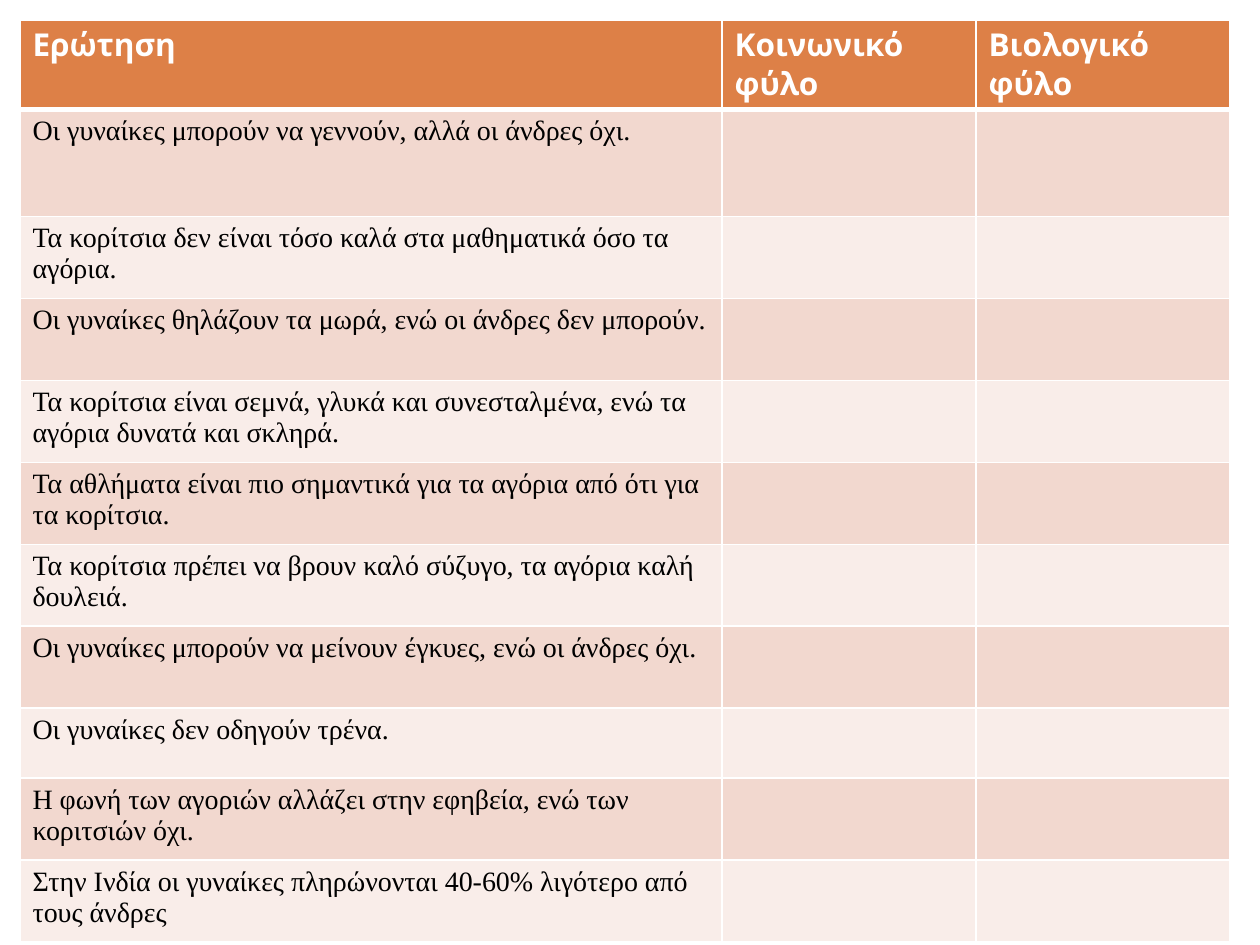
import dataclasses

import pptx
import pptx.dml.color
import pptx.oxml
import pptx.oxml.ns
import pptx.util

EMU_PER_PX = 914400 // 126


@dataclasses.dataclass(frozen=True)
class Theme:
    header_fill: str = "DD8047"
    band_fills: tuple = ("F2D8CF", "F9EDE9")
    header_text: str = "FFFFFF"
    body_text: str = "000000"
    border: str = "FFFFFF"
    header_font: str = "Cabin"
    body_font: str = "Times New Roman"
    header_size: int = 18
    body_size: int = 16
    thin: int = 1
    thick: int = 3


def px(length):
    return pptx.util.Emu(length * EMU_PER_PX)


def rgb(value):
    return pptx.dml.color.RGBColor.from_string(value)


class PageBuilder:
    def __init__(self, page, theme):
        self.page = page
        self.theme = theme

    def table(self, left, top, widths, heights, rows):
        """Add a table with a header row and banded body rows."""
        frame = self.page.shapes.add_table(
            len(rows), len(widths), px(left), px(top), px(sum(widths)), px(sum(heights))
        )
        table = frame.table
        for column, width in zip(table.columns, widths):
            column.width = px(width)
        for row, height in zip(table.rows, heights):
            row.height = px(height)
        for row_number, texts in enumerate(rows):
            for column_number, text in enumerate(texts):
                self.cell(table.cell(row_number, column_number), text, row_number)

    def cell(self, cell, text, row_number):
        theme = self.theme
        is_header = row_number == 0
        cell.text = text
        font = cell.text_frame.paragraphs[0].font
        font.name = theme.header_font if is_header else theme.body_font
        font.size = pptx.util.Pt(theme.header_size if is_header else theme.body_size)
        font.bold = is_header
        font.color.rgb = rgb(theme.header_text if is_header else theme.body_text)
        cell.fill.solid()
        fill = theme.header_fill if is_header else theme.band_fills[(row_number - 1) % 2]
        cell.fill.fore_color.rgb = rgb(fill)
        top = theme.thick if row_number == 1 else theme.thin
        bottom = theme.thick if is_header else theme.thin
        self.borders(cell, L=theme.thin, R=theme.thin, T=top, B=bottom)

    def borders(self, cell, **widths):
        """Draw the given sides; borders must come before the fill in the XML."""
        properties = cell._tc.get_or_add_tcPr()
        for position, (side, width) in enumerate(widths.items()):
            line = pptx.oxml.parse_xml(
                f'<a:ln{side} {pptx.oxml.ns.nsdecls("a")} w="{pptx.util.Pt(width)}">'
                f'<a:solidFill><a:srgbClr val="{self.theme.border}"/></a:solidFill>'
                f"</a:ln{side}>"
            )
            properties.insert(position, line)


HEADINGS = ("Ερώτηση", "Κοινωνικό φύλο", "Βιολογικό φύλο")

# Each statement with its row height in px
STATEMENTS = (
    ("Οι γυναίκες μπορούν να γεννούν, αλλά οι άνδρες όχι.", 107),
    ("Τα κορίτσια δεν είναι τόσο καλά στα μαθηματικά όσο τα αγόρια.", 82),
    ("Οι γυναίκες θηλάζουν τα μωρά, ενώ οι άνδρες δεν μπορούν.", 82),
    ("Τα κορίτσια είναι σεμνά, γλυκά και συνεσταλμένα, ενώ τα αγόρια δυνατά και σκληρά.", 82),
    ("Τα αθλήματα είναι πιο σημαντικά για τα αγόρια από ότι για τα κορίτσια.", 82),
    ("Τα κορίτσια πρέπει να βρουν καλό σύζυγο, τα αγόρια καλή δουλειά.", 82),
    ("Οι γυναίκες μπορούν να μείνουν έγκυες, ενώ οι άνδρες όχι.", 82),
    ("Οι γυναίκες δεν οδηγούν τρένα.", 70),
    ("Η φωνή των αγοριών αλλάζει στην εφηβεία, ενώ των κοριτσιών όχι.", 82),
    ("Στην Ινδία οι γυναίκες πληρώνονται 40-60% λιγότερο από τους άνδρες", 82),
)


def main():
    deck = pptx.Presentation()
    deck.slide_width = px(1260)
    deck.slide_height = px(945)
    page = deck.slides.add_slide(deck.slide_layouts[6])
    builder = PageBuilder(page, Theme())
    builder.table(
        left=20,
        top=20,
        widths=(702, 254, 254),
        heights=[74] + [height for _, height in STATEMENTS],
        rows=[HEADINGS] + [(statement, "", "") for statement, _ in STATEMENTS],
    )
    deck.save("out.pptx")


if __name__ == "__main__":
    main()
